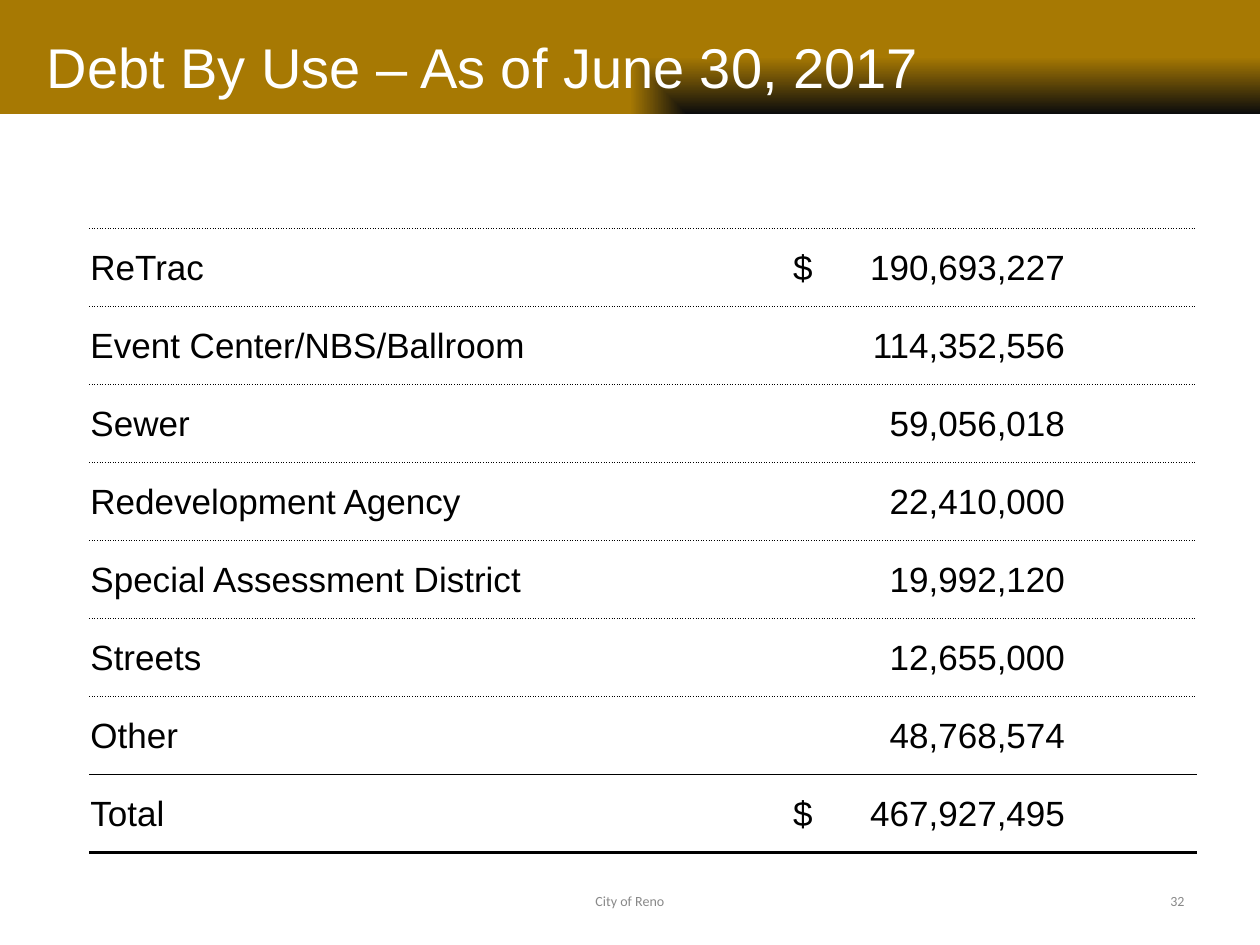
import pptx
import pptx.util
import pptx.dml.color
import pptx.enum.shapes
import pptx.enum.text
import pptx.oxml
import pptx.oxml.ns

Pt = pptx.util.Pt
ALIGN = pptx.enum.text.PP_ALIGN
MIDDLE = pptx.enum.text.MSO_ANCHOR.MIDDLE
NAMESPACE = pptx.oxml.ns.nsdecls("a")
COLORS = {"gold": "A77903", "dark": "0C0C0C", "white": "FFFFFF",
          "black": "000000", "gray": "898989"}


def format_text(paragraph, font_name, size, color):
    for run in paragraph.runs:
        run.font.name = font_name
        run.font.size = Pt(size)
        run.font.color.rgb = pptx.dml.color.RGBColor.from_string(COLORS[color])


def border_xml(side, width=0, dash="solid"):
    if not width:
        return f'<a:{side} {NAMESPACE} w="0"><a:noFill/></a:{side}>'
    return (f'<a:{side} {NAMESPACE} w="{Pt(width)}"><a:solidFill>'
            f'<a:srgbClr val="{COLORS["black"]}"/></a:solidFill>'
            f'<a:prstDash val="{dash}"/></a:{side}>')


presentation = pptx.Presentation()
presentation.slide_width = Pt(720)
presentation.slide_height = Pt(540)
slide = presentation.slides.add_slide(presentation.slide_layouts[5])

# Header band with a gradient from the bottom right corner
header = slide.shapes.add_shape(
    pptx.enum.shapes.MSO_SHAPE.RECTANGLE, Pt(0), Pt(0), Pt(720), Pt(65))
header.shadow.inherit = False
header.line.fill.background()
header.fill.background()
no_fill = header.element.spPr.find(pptx.oxml.ns.qn("a:noFill"))
no_fill.getparent().replace(no_fill, pptx.oxml.parse_xml(
    f'<a:gradFill {NAMESPACE} rotWithShape="1"><a:gsLst>'
    f'<a:gs pos="0"><a:srgbClr val="{COLORS["dark"]}"/></a:gs>'
    f'<a:gs pos="100000"><a:srgbClr val="{COLORS["gold"]}"/></a:gs></a:gsLst>'
    '<a:path path="rect"><a:fillToRect l="100000" t="100000"/></a:path></a:gradFill>'))

# Title, in front of the band
title = slide.shapes.title
header.element.addnext(title.element)
title.left, title.top, title.width, title.height = Pt(19.5), Pt(9.5), Pt(562), Pt(56)
title.text_frame.text = "Debt By Use – As of June 30, 2017"
title.text_frame.vertical_anchor = MIDDLE
title_paragraph = title.text_frame.paragraphs[0]
title_paragraph.alignment = ALIGN.LEFT
title_properties = title_paragraph._p.get_or_add_pPr()
title_properties.set("marL", str(Pt(36)))
title_properties.set("indent", str(Pt(-36)))
format_text(title_paragraph, "Arial", 32, "white")

# Debt table: use, currency sign, amount
debts = [
    ("ReTrac", "$", "190,693,227"),
    ("Event Center/NBS/Ballroom", "", "114,352,556"),
    ("Sewer", "", "59,056,018"),
    ("Redevelopment Agency", "", "22,410,000"),
    ("Special Assessment District", "", "19,992,120"),
    ("Streets", "", "12,655,000"),
    ("Other", "", "48,768,574"),
    ("Total", "$", "467,927,495"),
]
row_height = 44.6
table = slide.shapes.add_table(
    len(debts), 2, Pt(51), Pt(130.5), Pt(633), Pt(row_height * len(debts))).table
table.first_row = False
table.horz_banding = False
table.columns[0].width = Pt(396)
table.columns[1].width = Pt(237)

dotted, thin, thick = (0.5, "sysDot"), (0.5, "solid"), (2, "solid")
row_lines = [dotted] * (len(debts) - 1) + [thin, thick]
for row, (use, sign, amount) in enumerate(debts):
    table.rows[row].height = Pt(row_height)
    for column, text in enumerate((use, f"\t{sign}\t{amount}")):
        cell = table.cell(row, column)
        cell.margin_left = cell.margin_right = cell.margin_top = Pt(0.7)
        cell.margin_bottom = Pt(0)
        cell.vertical_anchor = MIDDLE
        cell.fill.background()
        paragraph = cell.text_frame.paragraphs[0]
        paragraph.text = text
        if column == 1:
            paragraph._p.get_or_add_pPr().append(pptx.oxml.parse_xml(
                f'<a:tabLst {NAMESPACE}><a:tab pos="{Pt(5.5)}" algn="l"/>'
                f'<a:tab pos="{Pt(161)}" algn="r"/></a:tabLst>'))
        format_text(paragraph, "Arial", 20, "black")
        borders = [border_xml("lnL"), border_xml("lnR"),
                   border_xml("lnT", *row_lines[row]),
                   border_xml("lnB", *row_lines[row + 1])]
        cell_properties = cell._tc.get_or_add_tcPr()
        for position, border in enumerate(borders):
            cell_properties.insert(position, pptx.oxml.parse_xml(border))

# Footer and slide number
for text, left, width, alignment in [("City of Reno", 246, 228, ALIGN.CENTER),
                                     ("32", 516, 168, ALIGN.RIGHT)]:
    footer = slide.shapes.add_textbox(Pt(left), Pt(500.5), Pt(width), Pt(28.75))
    footer.text_frame.word_wrap = True
    footer.text_frame.vertical_anchor = MIDDLE
    footer.text_frame.text = text
    footer.text_frame.paragraphs[0].alignment = alignment
    format_text(footer.text_frame.paragraphs[0], "Calibri", 8, "gray")

presentation.save("out.pptx")
